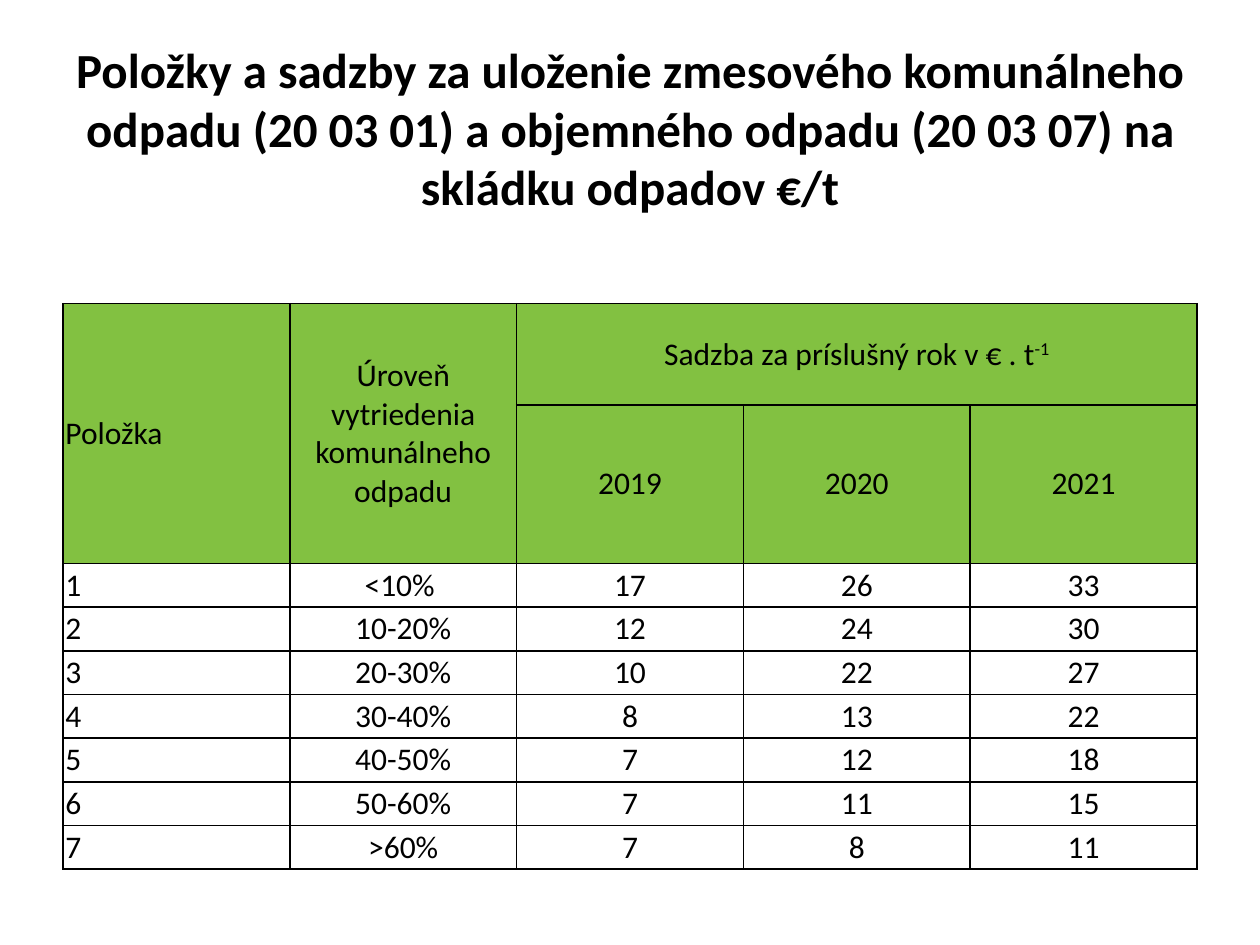
from dataclasses import dataclass

from lxml.etree import SubElement
from pptx import Presentation
from pptx.dml.color import RGBColor
from pptx.enum.text import MSO_ANCHOR as Anchor, PP_ALIGN as Align
from pptx.oxml.ns import qn
from pptx.util import Cm, Pt


@dataclass(frozen=True)
class Theme:
    font: str = "Calibri"
    text: str = "000000"
    border: str = "000000"
    header: str = "82C141"
    body: str = "FFFFFF"
    title_size: int = 28
    table_size: int = 18
    border_width: int = 1


THEME = Theme()

TITLE = (
    "Položky a sadzby za uloženie zmesového komunálneho odpadu (20 03 01) "
    "a objemného odpadu (20 03 07) na skládku odpadov €/t"
)
RATE_HEADING = "Sadzba za príslušný rok v € . t"
RATE_EXPONENT = "-1"
HEADER_ROWS = [
    ["Položka", "Úroveň vytriedenia komunálneho odpadu", RATE_HEADING, "", ""],
    ["", "", "2019", "2020", "2021"],
]
BODY_ROWS = [
    ["1", "<10% ", "17", "26", "33"],
    ["2", "10-20%", "12", "24", "30"],
    ["3", "20-30%", "10", "22", "27"],
    ["4", "30-40%", "8", "13", "22"],
    ["5", "40-50%", "7", "12", "18"],
    ["6", "50-60%", "7", "11", "15"],
    ["7", ">60%", "7", "8", "11"],
]
HEADER_HEIGHTS = [2.04, 3.2]
BODY_HEIGHT = 0.88


def style_paragraph(paragraph, size, align, bold=False):
    paragraph.alignment = align
    font = paragraph.font
    font.name, font.size, font.bold = THEME.font, Pt(size), bold
    font.color.rgb = RGBColor.from_string(THEME.text)


def add_borders(cell):
    properties = cell._tc.get_or_add_tcPr()
    for side in ("a:lnL", "a:lnR", "a:lnT", "a:lnB"):
        line = SubElement(properties, qn(side), w=str(Pt(THEME.border_width)))
        fill = SubElement(line, qn("a:solidFill"))
        SubElement(fill, qn("a:srgbClr"), val=THEME.border)


def style_cell(cell, color, align):
    cell.vertical_anchor = Anchor.MIDDLE
    cell.margin_left = cell.margin_right = Cm(0.05)
    cell.margin_top = cell.margin_bottom = Cm(0.05)
    add_borders(cell)
    cell.fill.solid()
    cell.fill.fore_color.rgb = RGBColor.from_string(color)
    style_paragraph(cell.text_frame.paragraphs[0], THEME.table_size, align)


def add_title(slide, left, top, width, height):
    frame = slide.shapes.add_textbox(left, top, width, height).text_frame
    frame.word_wrap = True
    frame.vertical_anchor = Anchor.MIDDLE
    frame.text = TITLE
    style_paragraph(frame.paragraphs[0], THEME.title_size, Align.CENTER, bold=True)


def add_rate_table(slide, left, top, width):
    rows = HEADER_ROWS + BODY_ROWS
    heights = HEADER_HEIGHTS + [BODY_HEIGHT] * len(BODY_ROWS)
    columns = len(rows[0])
    table = slide.shapes.add_table(
        len(rows), columns, left, top, width, Cm(sum(heights))
    ).table
    for column in table.columns:
        column.width = width // columns

    # Cell texts and styles
    for row_index, (texts, height) in enumerate(zip(rows, heights)):
        table.rows[row_index].height = Cm(height)
        color = THEME.header if row_index < len(HEADER_ROWS) else THEME.body
        for column_index, text in enumerate(texts):
            cell = table.cell(row_index, column_index)
            cell.text = text
            style_cell(cell, color, Align.CENTER if column_index else Align.LEFT)

    # Superscript in the rate heading
    rate_cell = table.cell(0, 2)
    exponent = rate_cell.text_frame.paragraphs[0].add_run()
    exponent.text = RATE_EXPONENT
    exponent._r.get_or_add_rPr().set("baseline", "30000")

    # Merged headings
    for column_index in (0, 1):
        table.cell(0, column_index).merge(table.cell(1, column_index))
    rate_cell.merge(table.cell(0, columns - 1))


def main():
    presentation = Presentation()
    presentation.slide_width, presentation.slide_height = Cm(25.4), Cm(19.05)
    slide = presentation.slides.add_slide(presentation.slide_layouts[6])
    margin = Cm(1.27)
    width = presentation.slide_width - 2 * margin
    add_title(slide, margin, Cm(0.46), width, Cm(4.22))
    add_rate_table(slide, margin, Cm(6.12), width)
    presentation.save("out.pptx")


if __name__ == "__main__":
    main()
